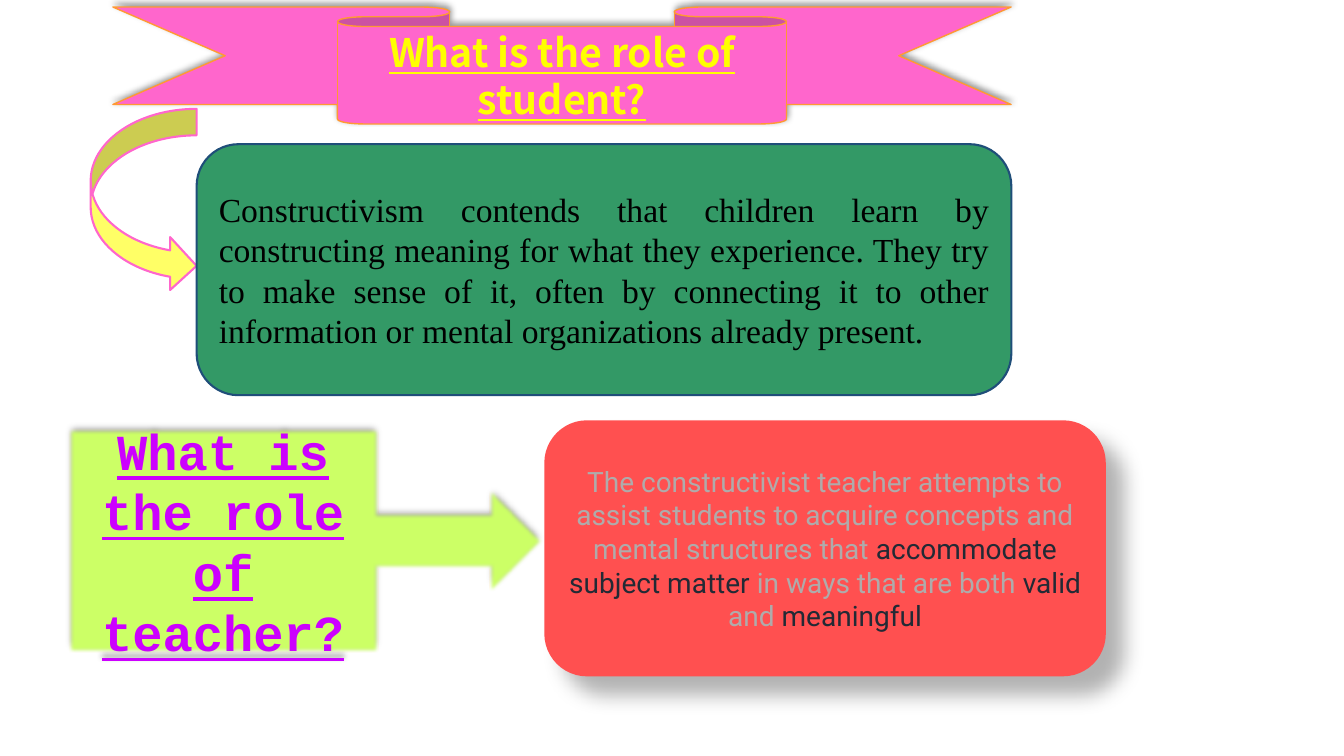
from lxml.etree import SubElement
from pptx import Presentation
from pptx.dml.color import RGBColor
from pptx.enum.shapes import MSO_SHAPE
from pptx.enum.text import MSO_ANCHOR, PP_ALIGN
from pptx.oxml import parse_xml
from pptx.oxml.ns import nsdecls, qn
from pptx.util import Inches, Pt

THEME = {
    "pink": "FF66CC", "orange": "FF9933", "lemon": "FFFF66", "green": "339966",
    "navy": "1F4E79", "coral": "FF5050", "lime": "CCFF66", "amber": "FFC000",
    "yellow": "FFFF00", "black": "000000", "silver": "AFABAB", "ink": "222A35",
    "violet": "CC00FF", "white": "FFFFFF", "charcoal": "3B3838",
    "banner": ("Noto Sans CJK SC", 28), "body": ("Times New Roman", 24),
    "answer": ("Roboto", 20), "callout": ("Courier New", 36),
}


def add_panel(kind, area, fill, line=None, shadow=None, soft_edge=0):
    left, top, width, height = area
    box = page.shapes.add_shape(
        kind,
        int(deck.slide_width * left / 100), int(deck.slide_height * top / 100),
        int(deck.slide_width * width / 100), int(deck.slide_height * height / 100))
    box.shadow.inherit = False
    box.fill.solid()
    box.fill.fore_color.rgb = RGBColor.from_string(THEME[fill])
    if line:
        color, weight = line
        box.line.color.rgb = RGBColor.from_string(THEME[color])
        box.line.width = Pt(weight)
    else:
        box.line.fill.background()
    effects = box._element.spPr.find(qn("a:effectLst"))
    if shadow:
        opacity, blur, distance, angle = shadow
        outer = SubElement(effects, qn("a:outerShdw"), blurRad=str(Pt(blur)),
                           dist=str(Pt(distance)), dir=str(angle * 60000), rotWithShape="0")
        tint = SubElement(outer, qn("a:srgbClr"), val=THEME["black"])
        SubElement(tint, qn("a:alpha"), val=str(opacity * 1000))
    if soft_edge:
        SubElement(effects, qn("a:softEdge"), rad=str(Pt(soft_edge)))
    return box


def write(box, style, spans, align=PP_ALIGN.CENTER, heading=False, outline=None):
    box.text_frame.word_wrap = True
    box.text_frame.vertical_anchor = MSO_ANCHOR.MIDDLE
    para = box.text_frame.paragraphs[0]
    para.alignment = align
    for text, color in spans:
        span = para.add_run()
        span.text = text
        span.font.name, size = THEME[style]
        span.font.size = Pt(size)
        span.font.color.rgb = RGBColor.from_string(THEME[color])
        if heading:
            span.font.bold = True
            span.font.underline = True
        if outline:
            edge, weight = outline
            span.font._element.insert(0, parse_xml(
                f'<a:ln {nsdecls("a")} w="{Pt(weight)}"><a:solidFill>'
                f'<a:srgbClr val="{THEME[edge]}"/></a:solidFill></a:ln>'))


deck = Presentation()
deck.slide_width, deck.slide_height = Inches(13.33), Inches(7.5)
page = deck.slides.add_slide(deck.slide_layouts[6])
lifted = (40, 4, 3, 270)

banner = add_panel(MSO_SHAPE.DOWN_RIBBON, (8.4, 0.93, 66.83, 15.47),
                   "pink", ("orange", 1), lifted)
write(banner, "banner", [("What is the role of student?", "yellow")],
      heading=True, outline=("charcoal", 0.75))

add_panel(MSO_SHAPE.CURVED_RIGHT_ARROW, (6.75, 14.4, 7.88, 24.27),
          "lemon", ("pink", 1.5))

student = add_panel(MSO_SHAPE.ROUNDED_RECTANGLE, (14.63, 19.07, 60.62, 33.2),
                    "green", ("navy", 1.5))
write(student, "body", [(
    "Constructivism contends that children learn by constructing meaning for what they "
    "experience. They try to make sense of it, often by connecting it to other "
    "information or mental organizations already present.", "black")],
    align=PP_ALIGN.JUSTIFY)

teacher = add_panel(MSO_SHAPE.ROUNDED_RECTANGLE, (40.5, 55.6, 41.78, 33.87),
                    "coral", shadow=(30, 15, 18, 45))
write(teacher, "answer", [
    ("The constructivist teacher attempts to assist students to acquire concepts "
     "and mental structures that ", "silver"),
    ("accommodate subject matter", "ink"),
    (" in ways that are both ", "silver"),
    ("valid", "ink"),
    (" and ", "silver"),
    ("meaningful", "ink"),
], outline=("navy", 0.75))

question = add_panel(MSO_SHAPE.RIGHT_ARROW_CALLOUT, (5.1, 56.8, 35.4, 29.47),
                     "lime", ("amber", 0.5), lifted, soft_edge=2.5)
write(question, "callout", [("What is the role of teacher?", "violet")],
      heading=True, outline=("white", 1.06))

deck.save("out.pptx")
